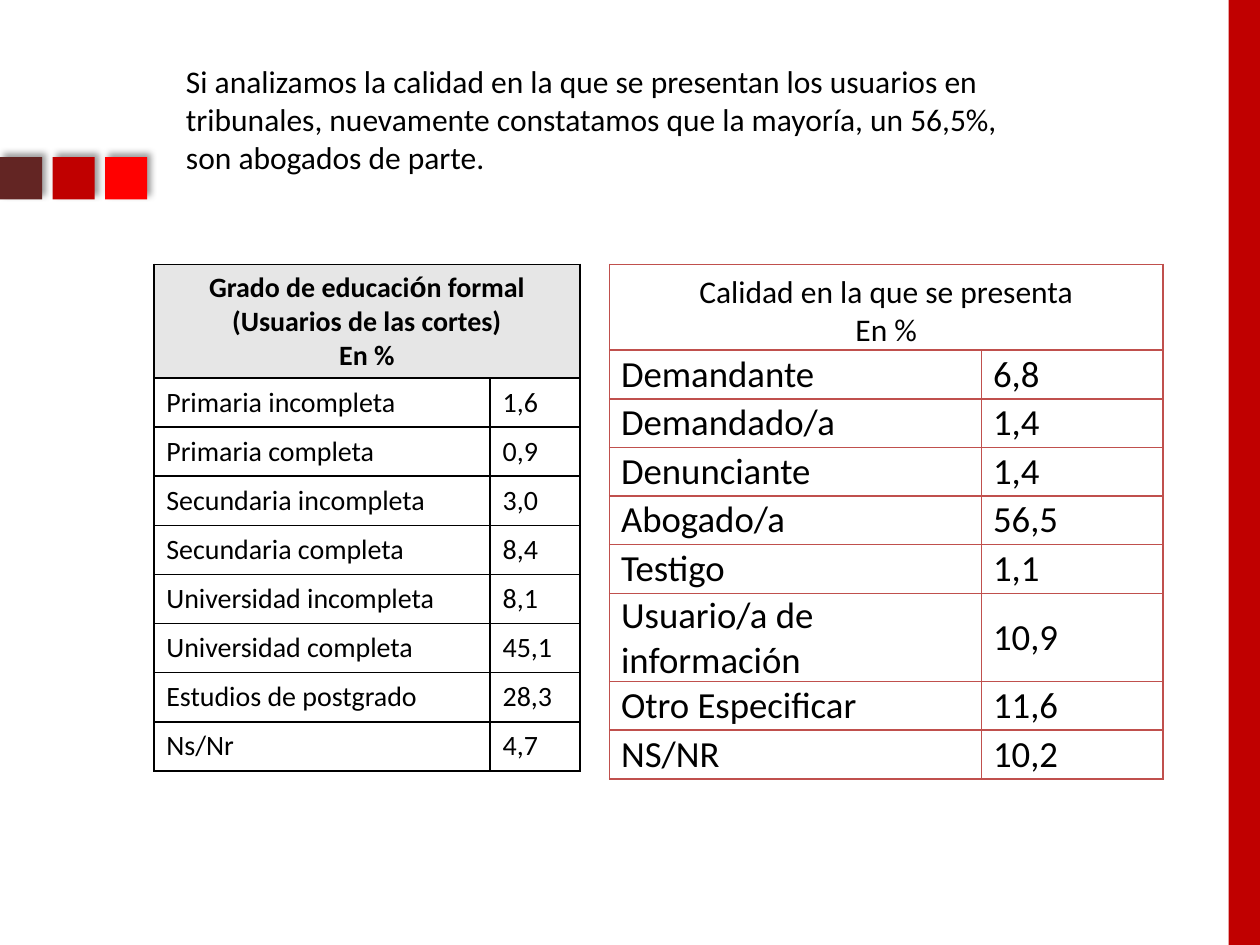
from lxml import etree
from pptx import Presentation
from pptx.dml.color import RGBColor
from pptx.enum.shapes import MSO_SHAPE
from pptx.enum.text import MSO_ANCHOR as ANCHOR, PP_ALIGN as ALIGN
from pptx.oxml import parse_xml
from pptx.oxml.ns import qn
from pptx.util import Cm, Pt

NS = 'xmlns:a="http://schemas.openxmlformats.org/drawingml/2006/main"'
INTRO = [
    "Si analizamos la calidad en la que se presentan los usuarios en",
    "tribunales, nuevamente constatamos que la mayoría, un 56,5%,",
    "son abogados de parte.",
]
EDUCATION_TITLE = [
    [("Grado de educaci", "Calibri"), ("ó", "Arial"), ("n formal", "Calibri")],
    "(Usuarios de las cortes)",
    "En %",
]
EDUCATION = [
    ("Primaria incompleta", "1,6"),
    ("Primaria completa", "0,9"),
    ("Secundaria incompleta", "3,0"),
    ("Secundaria completa", "8,4"),
    ("Universidad incompleta", "8,1"),
    ("Universidad completa", "45,1"),
    ("Estudios de postgrado", "28,3"),
    ("Ns/Nr", "4,7"),
]
CAPACITY_TITLE = ["Calidad en la que se presenta", "En %"]
CAPACITY = [
    ("Demandante", "6,8"),
    ("Demandado/a", "1,4"),
    ("Denunciante", "1,4"),
    ("Abogado/a", "56,5"),
    ("Testigo", "1,1"),
    ("Usuario/a de información", "10,9"),
    ("Otro Especificar", "11,6"),
    ("NS/NR", "10,2"),
]


def rgb(color):
    return RGBColor.from_string(color)


def write(tf, lines, size=18, bold=False, align=ALIGN.LEFT, color="000000"):
    tf.word_wrap = True
    for i, line in enumerate(lines):
        p = tf.paragraphs[0] if i == 0 else tf.add_paragraph()
        p.alignment = align
        runs = [(line, "Calibri")] if isinstance(line, str) else line
        for text, font in runs:
            r = p.add_run()
            r.text = text
            r.font.name = font
            r.font.size = Pt(size)
            r.font.bold = bold
            r.font.color.rgb = rgb(color)


def add_text(slide, x, y, w, h, lines, **fmt):
    tf = slide.shapes.add_textbox(Cm(x), Cm(y), Cm(w), Cm(h)).text_frame
    write(tf, lines, **fmt)


def add_rect(slide, x, y, w, h, color, shadow=False):
    sp = slide.shapes.add_shape(MSO_SHAPE.RECTANGLE, Cm(x), Cm(y), Cm(w), Cm(h))
    sp.fill.solid()
    sp.fill.fore_color.rgb = rgb(color)
    sp.line.fill.background()
    sp.shadow.inherit = False
    if shadow:
        effects = sp._element.spPr.find(qn("a:effectLst"))
        outer = etree.SubElement(effects, qn("a:outerShdw"), blurRad=str(Pt(4)),
                                 dist=str(Pt(3)), dir=str(315 * 60000), algn="bl", rotWithShape="0")
        black = etree.SubElement(outer, qn("a:srgbClr"), val="000000")
        etree.SubElement(black, qn("a:alpha"), val="40000")


def set_borders(cell, color):
    tcPr = cell._tc.get_or_add_tcPr()
    for i, side in enumerate("LRTB"):
        tcPr.insert(i, parse_xml(
            f'<a:ln{side} {NS} w="{Pt(1)}"><a:solidFill><a:srgbClr val="{color}"/>'
            f'</a:solidFill></a:ln{side}>'))


def add_data_table(slide, x, y, widths, heights, title, rows, border, head_fmt, size,
                   head_fill=None, head_anchor=ANCHOR.MIDDLE, flat=False):
    frame = slide.shapes.add_table(len(rows) + 1, 2, Cm(x), Cm(y),
                                   Cm(sum(widths)), Cm(sum(heights)))
    table = frame.table
    table.first_row = table.horz_banding = False
    for col, width in zip(table.columns, widths):
        col.width = Cm(width)
    for row, height in zip(table.rows, heights):
        row.height = Cm(height)
    for cell in table.iter_cells():
        cell.fill.background()
        cell.vertical_anchor = ANCHOR.MIDDLE
        if flat:
            cell.margin_left = cell.margin_right = Cm(0.23)
            cell.margin_top = cell.margin_bottom = 0
        set_borders(cell, border)
    head = table.cell(0, 0)
    head.merge(table.cell(0, 1))
    head.vertical_anchor = head_anchor
    if head_fill:
        head.fill.solid()
        head.fill.fore_color.rgb = rgb(head_fill)
    write(head.text_frame, title, align=ALIGN.CENTER, **head_fmt)
    for i, values in enumerate(rows, 1):
        for j, value in enumerate(values):
            write(table.cell(i, j).text_frame, [value], size=size)


def main():
    prs = Presentation()
    prs.slide_width, prs.slide_height = Cm(25.4), Cm(19.05)
    slide = prs.slides.add_slide(prs.slide_layouts[6])

    add_rect(slide, 24.77, 0, 0.63, 19.05, "C00000")
    for i, color in enumerate(["632523", "C00000", "FF0000"]):
        add_rect(slide, i * 1.06, 3.17, 0.85, 0.85, color, shadow=True)
    add_text(slide, 3.5, 1.13, 18.8, 3.4, INTRO)

    add_data_table(slide, 3.1, 5.33, [6.78, 1.81], [2.29] + [0.99] * 8,
                   EDUCATION_TITLE, EDUCATION, "000000",
                   {"size": 16, "bold": True}, 16, head_fill="E6E6E6")
    add_data_table(slide, 12.29, 5.33, [7.5, 3.65], [1.73] + [0.98] * 5 + [1.73] + [0.98] * 2,
                   CAPACITY_TITLE, CAPACITY, "C0504D",
                   {"size": 18}, 21, head_anchor=ANCHOR.BOTTOM, flat=True)
    prs.save("out.pptx")


if __name__ == "__main__":
    main()
